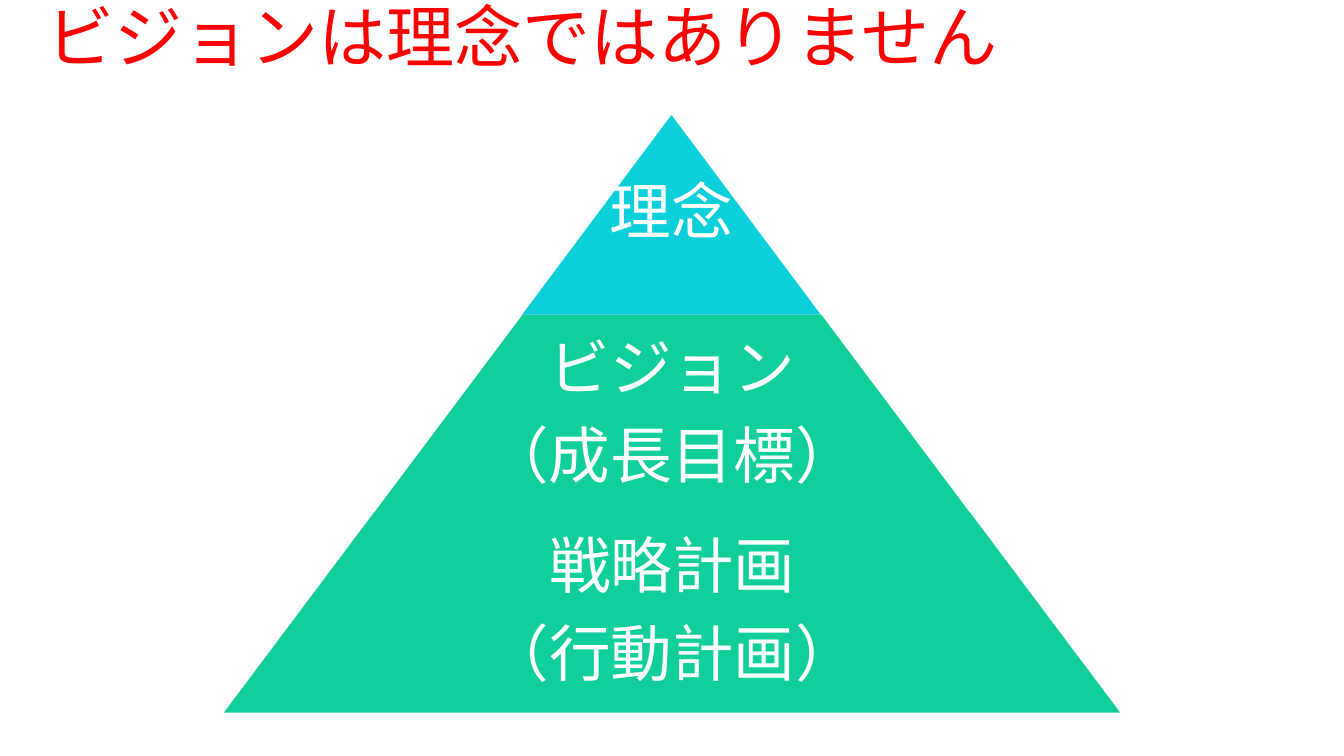
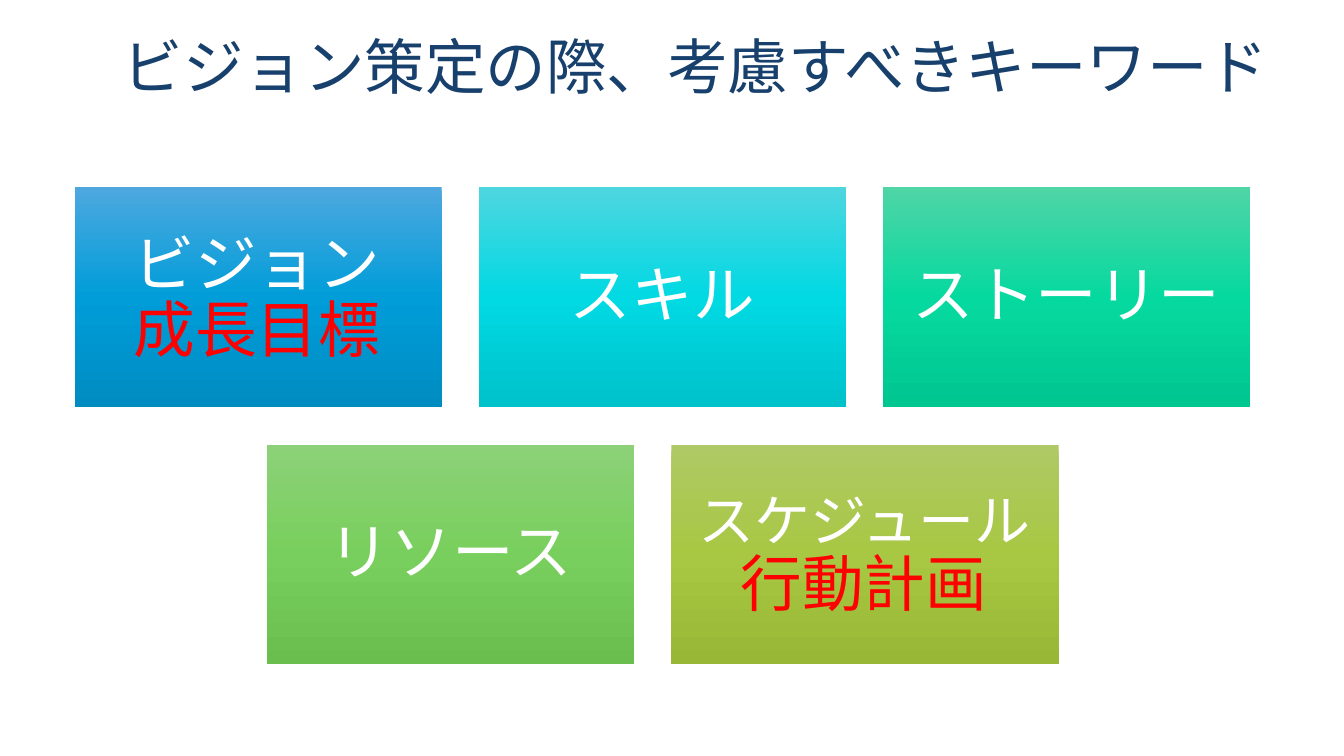
from copy import deepcopy

from pptx import Presentation
from pptx import util as u
from pptx.dml.color import RGBColor
from pptx.enum import shapes, text
from pptx.oxml.ns import qn

PX = 9144
WHITE, RED, NAVY = "FFFFFF", "FF0000", "17406D"
CYAN, GREEN = "0BD0D9", "10CF9B"
TITLE_FONT, BODY_FONT = "Noto Sans CJK JP", "Arial"
BODY_SIZE = 44


def px(*lengths):
    return [u.Emu(round(length) * PX) for length in lengths]


def color(hex_code):
    return RGBColor.from_string(hex_code)


def style_run(run, font, size, hex_code):
    run.font.name = font
    run.font.size = u.Pt(size)
    run.font.color.rgb = color(hex_code)
    latin = run.font._element.find(qn("a:latin"))
    east_asian = deepcopy(latin)
    east_asian.tag = qn("a:ea")
    latin.addnext(east_asian)


def add_title(slide, box, wording, size, hex_code):
    frame = slide.shapes.add_textbox(*px(*box)).text_frame
    frame.word_wrap = True
    frame.vertical_anchor = text.MSO_ANCHOR.TOP
    frame.text = wording
    heading = frame.paragraphs[0]
    heading.line_spacing = 0.8
    style_run(heading.runs[0], TITLE_FONT, size, hex_code)


def write_label(frame, wording, inset, run_styles=((BODY_SIZE, WHITE),)):
    frame.word_wrap = True
    frame.vertical_anchor = text.MSO_ANCHOR.MIDDLE
    frame.margin_left, frame.margin_top, frame.margin_right, frame.margin_bottom = px(*[inset] * 4)
    frame.text = wording
    for paragraph in frame.paragraphs:
        paragraph.alignment = text.PP_ALIGN.CENTER
        paragraph.line_spacing = 0.9
        paragraph.space_after = u.Pt(0.35 * BODY_SIZE)
        for run, (size, hex_code) in zip(paragraph.runs, run_styles):
            style_run(run, BODY_FONT, size, hex_code)


def add_plain_shape(slide, preset, box):
    shape = slide.shapes.add_shape(preset, *px(*box))
    shape.shadow.inherit = False
    shape.line.fill.background()
    return shape


def fill_gradient(shape, hex_codes):
    shape.fill.gradient()
    shape.fill.gradient_angle = 270
    stops = shape.fill.gradient_stops
    last_stop = stops[1]._gs
    last_stop.addprevious(deepcopy(last_stop))
    for stop, position, hex_code in zip(shape.fill.gradient_stops, (0, 0.5, 1), hex_codes):
        stop.position = position
        stop.color.rgb = color(hex_code)


def add_pyramid(slide, box, tiers):
    left, top, width, height = box
    tier_height = height / len(tiers)
    center = left + width / 2
    for level, (wording, fill, label_share) in enumerate(tiers):
        tier_width = width * (level + 1) / len(tiers)
        tier_top = top + level * tier_height
        tier = add_plain_shape(slide, shapes.MSO_SHAPE.TRAPEZOID,
                               (center - tier_width / 2, tier_top, tier_width, tier_height))
        tier.adjustments[0] = 0.75
        tier.fill.solid()
        tier.fill.fore_color.rgb = color(fill)
        label_width = tier_width * label_share
        label = slide.shapes.add_textbox(
            *px(center - label_width / 2, tier_top, label_width, tier_height))
        write_label(label.text_frame, wording, 6)


def add_keyword_card(slide, box, wording, gradient, accent_size=None):
    card = add_plain_shape(slide, shapes.MSO_SHAPE.RECTANGLE, box)
    fill_gradient(card, gradient)
    if accent_size:
        left, top, width, height = box
        label = slide.shapes.add_textbox(*px(left - 1, top + 2, width, height))
        write_label(label.text_frame, wording, 18, ((accent_size, WHITE), (BODY_SIZE, RED)))
    else:
        write_label(card.text_frame, wording, 18)


def add_keyword_rows(slide, top, card_height, gap, rows):
    for row_index, (row_left, cards) in enumerate(rows):
        left = row_left
        row_top = top + row_index * (card_height + gap)
        for width, *content in cards:
            add_keyword_card(slide, (left, row_top, width, card_height), *content)
            left += width + gap


def build_pyramid_slide(slide):
    add_pyramid(slide, (222, 114, 889, 593), [
        ("理念", CYAN, 1),
        ("ビジョン\n（成長目標）", GREEN, 0.65),
        ("戦略計画\n（行動計画）", GREEN, 0.65),
    ])
    add_title(slide, (36, 5, 1050, 109), "ビジョンは理念ではありません", 48.6, RED)


def build_keyword_slide(slide):
    add_title(slide, (112, 38, 1177, 109), "ビジョン策定の際、考慮すべきキーワード", 43.2, NAVY)
    add_keyword_rows(slide, 186, 218, 37, [
        (74, [
            (364, "ビジョン\v成長目標", ("4EA8DF", "009DD9", "008CC1"), 44),
            (364, "スキル", ("4ED6DF", "01D9E3", "00C2CB")),
            (364, "ストーリー", ("4FD5A6", "06D99F", "00C690")),
        ]),
        (265, [
            (364, "リソース", ("8CD178", "79CF5D", "69BE4D")),
            (384, "スケジュール\v行動計画", ("AFC966", "A8C843", "98B736"), 40),
        ]),
    ])


def main():
    deck = Presentation()
    deck.slide_width, deck.slide_height = px(1333, 750)
    blank = deck.slide_layouts[6]
    for build in (build_pyramid_slide, build_keyword_slide):
        build(deck.slides.add_slide(blank))
    deck.save("out.pptx")


if __name__ == "__main__":
    main()
